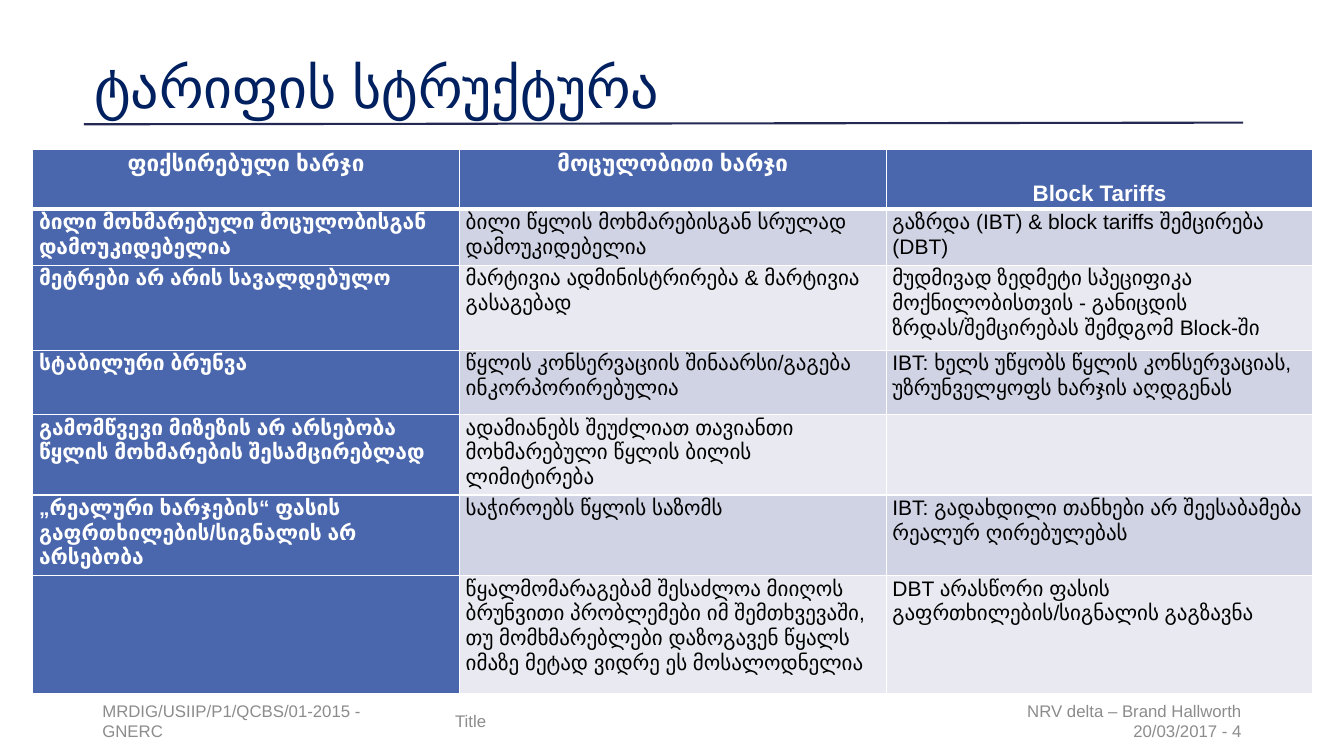
from dataclasses import dataclass
from lxml import etree
from pptx import Presentation
from pptx.dml.color import RGBColor
from pptx.enum.shapes import MSO_CONNECTOR
from pptx.enum.text import MSO_ANCHOR, PP_ALIGN
from pptx.oxml.ns import qn
from pptx.util import Emu, Pt

LEFT, CENTER, RIGHT = PP_ALIGN.LEFT, PP_ALIGN.CENTER, PP_ALIGN.RIGHT
TOP, MIDDLE, BOTTOM = MSO_ANCHOR.TOP, MSO_ANCHOR.MIDDLE, MSO_ANCHOR.BOTTOM
STRAIGHT = MSO_CONNECTOR.STRAIGHT

GRID_COLS, GRID_ROWS, UNIT = 160, 90, 76200


@dataclass(frozen=True)
class Theme:
    font: str = "Arial"
    title: str = "002060"
    rule: str = "242852"
    footer: str = "8C8C8C"
    accent: str = "4A66AC"
    bands: tuple = ("D0D3E3", "E9EAF1")
    light: str = "FFFFFF"
    dark: str = "000000"
    title_size: float = 40
    header_size: float = 16
    cell_size: float = 15
    footer_size: float = 12
    cell_spacing: float = 1.06


THEME = Theme()

HEADERS = ["ფიქსირებული ხარჯი", "მოცულობითი ხარჯი", "Block Tariffs"]
ROWS = [
    ["ბილი მოხმარებული მოცულობისგან დამოუკიდებელია",
     "ბილი წყლის მოხმარებისგან სრულად დამოუკიდებელია",
     "გაზრდა (IBT) & block tariffs შემცირება (DBT)"],
    ["მეტრები არ არის სავალდებულო",
     "მარტივია ადმინისტრირება & მარტივია გასაგებად",
     "მუდმივად ზედმეტი სპეციფიკა მოქნილობისთვის - განიცდის "
     "ზრდას/შემცირებას შემდგომ Block-ში"],
    ["სტაბილური ბრუნვა",
     "წყლის კონსერვაციის შინაარსი/გაგება ინკორპორირებულია",
     "IBT: ხელს უწყობს წყლის კონსერვაციას, უზრუნველყოფს ხარჯის აღდგენას"],
    ["გამომწვევი მიზეზის არ არსებობა წყლის მოხმარების შესამცირებლად",
     "ადამიანებს შეუძლიათ თავიანთი მოხმარებული წყლის ბილის ლიმიტირება",
     ""],
    ["„რეალური ხარჯების“ ფასის გაფრთხილების/სიგნალის არ არსებობა",
     "საჭიროებს წყლის საზომს",
     "IBT: გადახდილი თანხები არ შეესაბამება რეალურ ღირებულებას"],
    ["",
     "წყალმომარაგებამ შესაძლოა მიიღოს ბრუნვითი პრობლემები იმ შემთხვევაში, "
     "თუ მომხმარებლები დაზოგავენ წყალს იმაზე მეტად ვიდრე ეს მოსალოდნელია",
     "DBT არასწორი ფასის გაფრთხილების/სიგნალის გაგზავნა"],
]
ROW_HEIGHTS = [7.1, 6.7, 10.1, 7.7, 9.5, 9.6, 14]
COLUMN_WIDTH = 50.8
FOOTERS = [
    ("MRDIG/USIIP/P1/QCBS/01-2015 - GNERC", 11, 40, LEFT),
    ("Title", 53, 54, LEFT),
    ("NRV delta – Brand Hallworth\v20/03/2017 - 4", 110, 39, RIGHT),
]


def grid(*lengths):
    return [Emu(round(n * UNIT)) for n in lengths]


def apply(obj, formats):
    for name, value in formats.items():
        setattr(obj, name, value)


def write(tf, text, size, color, bold=False, align=LEFT, spacing=1.0):
    p = tf.paragraphs[0]
    p.text = text
    apply(p, {"alignment": align, "line_spacing": spacing})
    for r in p.runs:
        apply(r.font, {"name": THEME.font, "size": Pt(size), "bold": bold})
        r.font.color.rgb = RGBColor.from_string(color)


def add_title(s, text):
    sp = s.shapes.title
    sp.left, sp.top, sp.width, sp.height = grid(10, 0, 138, 17.4)
    apply(sp.text_frame, {"vertical_anchor": BOTTOM, "word_wrap": True,
                          "margin_bottom": grid(3)[0]})
    write(sp.text_frame, text, THEME.title_size, THEME.title, spacing=0.9)


def add_footer(s, text, left, width, align):
    sp = s.shapes.add_textbox(*grid(left, 83.4, width, 4.8))
    apply(sp.text_frame, {"vertical_anchor": MIDDLE, "word_wrap": True})
    write(sp.text_frame, text, THEME.footer_size, THEME.footer, align=align)


def add_rule(s):
    line = s.shapes.add_connector(STRAIGHT, *grid(10, 14.8, 148, 14.6))
    line.line.color.rgb = RGBColor.from_string(THEME.rule)
    line.line.width = Pt(1.5)
    etree.SubElement(line._element.spPr, qn("a:effectLst"))


def add_borders(cell, widths):
    tcPr = cell._tc.get_or_add_tcPr()
    for side, width in widths.items():
        ln = etree.SubElement(tcPr, qn(f"a:ln{side}"), w=str(Pt(width)))
        fill = etree.SubElement(ln, qn("a:solidFill"))
        etree.SubElement(fill, qn("a:srgbClr"), val=THEME.light)


def style_cell(cell, fill, top=1, bottom=1, anchor=TOP):
    add_borders(cell, {"L": 1, "R": 1, "T": top, "B": bottom})
    cell.fill.solid()
    cell.fill.fore_color.rgb = RGBColor.from_string(fill)
    side, foot = grid(0.75, 0.4 if anchor == BOTTOM else 0)
    apply(cell, {"margin_left": side, "margin_right": side, "margin_top": 0,
                 "margin_bottom": foot, "vertical_anchor": anchor})


def add_tariff_table(s):
    size = len(ROWS) + 1, len(HEADERS)
    box = grid(3.9, 17.8, COLUMN_WIDTH * len(HEADERS), sum(ROW_HEIGHTS))
    table = s.shapes.add_table(*size, *box).table
    for column in table.columns:
        column.width = grid(COLUMN_WIDTH)[0]
    for row, height in zip(table.rows, ROW_HEIGHTS):
        row.height = grid(height)[0]
    for j, text in enumerate(HEADERS):
        cell = table.cell(0, j)
        last = j == len(HEADERS) - 1
        style_cell(cell, THEME.accent, bottom=3, anchor=BOTTOM if last else TOP)
        write(cell.text_frame, text, THEME.header_size, THEME.light, True,
              CENTER, THEME.cell_spacing)
    for i, texts in enumerate(ROWS):
        for j, text in enumerate(texts):
            cell = table.cell(i + 1, j)
            lead = j == 0
            fill = THEME.accent if lead else THEME.bands[i % 2]
            style_cell(cell, fill, top=3 if i == 0 else 1)
            write(cell.text_frame, text, THEME.cell_size,
                  THEME.light if lead else THEME.dark, lead,
                  spacing=THEME.cell_spacing)


def main():
    prs = Presentation()
    prs.slide_width, prs.slide_height = grid(GRID_COLS, GRID_ROWS)
    s = prs.slides.add_slide(prs.slide_layouts[5])
    add_title(s, "ტარიფის სტრუქტურა")
    for footer in FOOTERS:
        add_footer(s, *footer)
    add_rule(s)
    add_tariff_table(s)
    prs.save("out.pptx")


if __name__ == "__main__":
    main()
